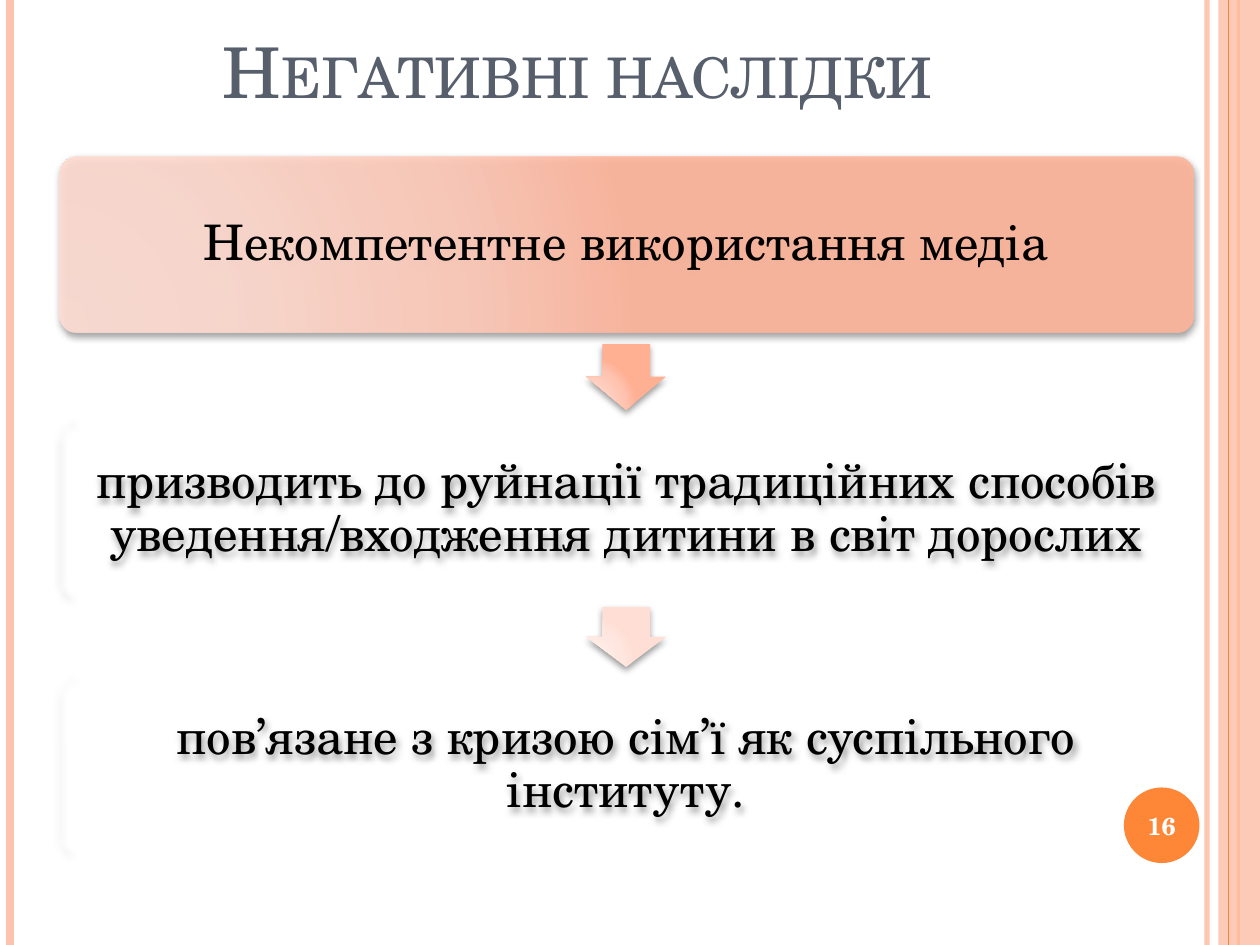
from dataclasses import dataclass

from lxml.etree import SubElement
from pptx import Presentation
from pptx.dml.color import RGBColor
from pptx.enum.shapes import MSO_CONNECTOR, MSO_SHAPE
from pptx.enum.text import MSO_ANCHOR, PP_ALIGN
from pptx.oxml import parse_xml
from pptx.oxml.ns import nsdecls, qn
from pptx.util import Inches, Pt


@dataclass(frozen=True)
class Theme:
    font: str = "TeX Gyre Schola"
    ink: str = "000000"
    title: str = "575F6D"
    white: str = "FFFFFF"
    accent: str = "FE8637"
    pale: str = "FEC3AE"
    panel: tuple = ("FFDED5", "FFDBD0", "FFC8B6", "FFB59B")
    arrows: tuple = (
        ("FFDBD1", "FFD8CC", "FFC3B0", "FFAF92"),
        ("FFEFEB", "FFEEE9", "FFE6DF", "FFDFD5"),
    )
    stops: tuple = (0, 30, 75, 100)
    head: int = 40
    body: int = 28
    small: int = 14


THEME = Theme()


def color(code):
    return RGBColor.from_string(code)


def fade(item, alpha):
    for node in item._element.spPr.iter(qn("a:srgbClr")):
        SubElement(node, qn("a:alpha"), val=str(alpha * 1000))


def add_shape(slide, kind, x, y, w, h, fill=None):
    shape = slide.shapes.add_shape(kind, Inches(x), Inches(y), Inches(w), Inches(h))
    shape.shadow.inherit = False
    shape.line.fill.background()
    if fill:
        shape.fill.solid()
        shape.fill.fore_color.rgb = color(fill)
    return shape


def add_rule(slide, x, y, h, code, width, alpha=100):
    rule = slide.shapes.add_connector(
        MSO_CONNECTOR.STRAIGHT, Inches(x), Inches(y), Inches(x), Inches(y + h)
    )
    rule.line.color.rgb = color(code)
    rule.line.width = Pt(width)
    SubElement(rule._element.spPr, qn("a:effectLst"))
    if alpha < 100:
        fade(rule, alpha)


def shade(shape, codes, alpha=100):
    stops = "".join(
        f'<a:gs pos="{pos * 1000}"><a:srgbClr val="{code}">'
        f'<a:alpha val="{alpha * 1000}"/></a:srgbClr></a:gs>'
        for pos, code in zip(THEME.stops, codes)
    )
    props = shape._element.spPr
    props.insert(2, parse_xml(
        f'<a:gradFill {nsdecls("a")} rotWithShape="1"><a:gsLst>{stops}</a:gsLst>'
        '<a:path path="circle"><a:fillToRect l="5000" t="100000" r="120000" b="10000"/>'
        "</a:path></a:gradFill>"
    ))
    props.find(qn("a:effectLst")).append(parse_xml(
        f'<a:outerShdw {nsdecls("a")} blurRad="{Pt(4)}" dist="{Pt(2)}" dir="5400000" '
        'rotWithShape="0"><a:srgbClr val="000000"><a:alpha val="40000"/></a:srgbClr>'
        "</a:outerShdw>"
    ))


def write(shape, text, size, code, anchor=MSO_ANCHOR.MIDDLE, bold=False):
    frame = shape.text_frame
    frame.text = text
    frame.word_wrap = True
    frame.vertical_anchor = anchor
    para = frame.paragraphs[0]
    para.alignment = PP_ALIGN.CENTER
    font = para.runs[0].font
    font.name = THEME.font
    font.size = Pt(size)
    font.bold = bold
    font.color.rgb = color(code)
    return frame


def add_frame(slide, x, y, w, h):
    right = x + w
    add_rule(slide, right - 0.42, y, h, THEME.pale, 3, 93)
    add_rule(slide, x + 0.08, y, h, THEME.pale, 4.5)
    add_rule(slide, right - 0.17, y, h, THEME.accent, 1.5)
    band = add_shape(slide, MSO_SHAPE.RECTANGLE, right - 0.33, y, 0.33, h, THEME.pale)
    fade(band, 87)
    add_rule(slide, right - 0.25, y, h, THEME.accent, 0.75)


def add_title(slide, x, y, w, h, text):
    box = slide.shapes.add_textbox(Inches(x), Inches(y), Inches(w), Inches(h))
    frame = write(box, text, THEME.head, THEME.title, MSO_ANCHOR.BOTTOM)
    frame.margin_bottom = Inches(0.66)
    frame.paragraphs[0].runs[0].font._element.set("cap", "small")


def add_panel(slide, x, y, w, h, text, alpha):
    panel = add_shape(slide, MSO_SHAPE.ROUNDED_RECTANGLE, x, y, w, h)
    panel.adjustments[0] = 0.1
    shade(panel, THEME.panel, alpha)
    frame = write(panel, text, THEME.body, THEME.ink)
    frame.margin_left = frame.margin_right = Inches(0.12)
    frame.margin_top = frame.margin_bottom = Inches(0.12)
    frame.paragraphs[0].line_spacing = 0.9


def add_arrow(slide, x, y, w, gap, codes):
    size, wide = gap * 0.75, 0.63
    arrow = add_shape(
        slide, MSO_SHAPE.RIGHT_ARROW,
        x + (w - size) / 2, y + (gap - wide) / 2, size, wide,
    )
    arrow.rotation = 90
    arrow.adjustments[0] = 0.6
    shade(arrow, codes)


def add_flow(slide, x, y, w, h, steps):
    tops = [y + drop for drop, _, _ in steps]
    for top, (_, text, alpha) in zip(tops, steps):
        add_panel(slide, x, top, w, h, text, alpha)
    for top, after, codes in zip(tops, tops[1:], THEME.arrows):
        add_arrow(slide, x, top + h, w, after - top - h, codes)


def add_badge(slide, x, y, size, text):
    badge = add_shape(slide, MSO_SHAPE.OVAL, x, y, size, size, THEME.accent)
    frame = write(badge, text, THEME.small, THEME.white, bold=True)
    frame.margin_left = frame.margin_right = 0


def main():
    deck = Presentation()
    deck.slide_width, deck.slide_height = Inches(10), Inches(7.5)
    slide = deck.slides.add_slide(deck.slide_layouts[6])
    steps = (
        (0, "Некомпетентне використання медіа", 90),
        (2.1, "призводить до руйнації традиційних способів "
              "уведення/входження дитини в світ дорослих", 70),
        (4.13, "пов’язане з кризою сім’ї як суспільного інституту.", 50),
    )
    add_frame(slide, 0, 0, 10, 7.5)
    add_title(slide, 0.5, 0.3, 8.17, 1.25, "Негативні наслідки")
    add_flow(slide, 0.47, 1.24, 9, 1.4, steps)
    add_badge(slide, 8.92, 6.25, 0.6, "16")
    deck.save("out.pptx")


if __name__ == "__main__":
    main()
